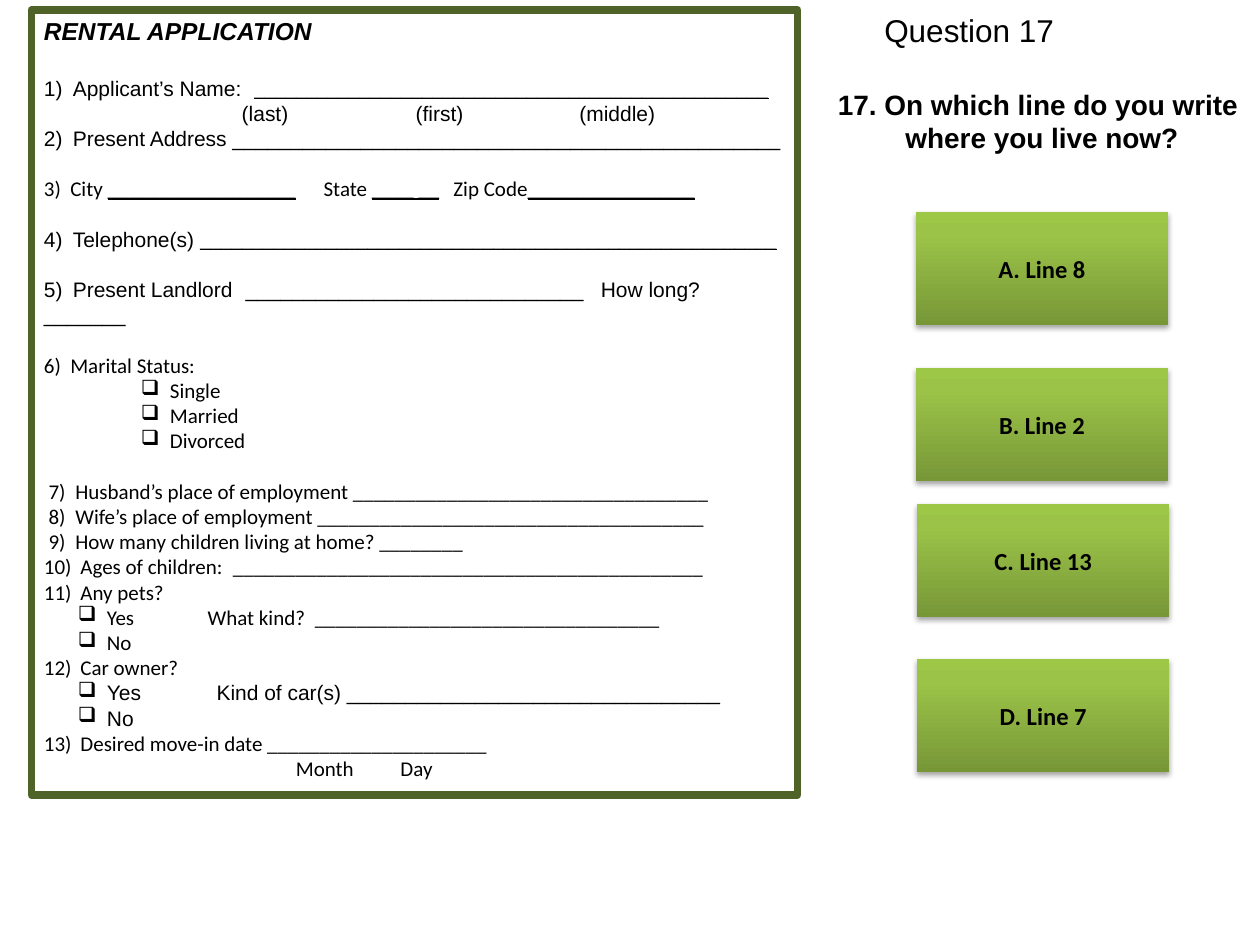
from dataclasses import dataclass

from lxml.etree import SubElement
from pptx import Presentation
from pptx.dml.color import RGBColor
from pptx.enum.shapes import MSO_SHAPE
from pptx.enum.text import MSO_ANCHOR, PP_ALIGN
from pptx.oxml.ns import qn
from pptx.util import Inches, Pt


@dataclass
class FormLine:
    """One form line; text between bars is an underlined blank."""
    text: str
    font: str = "Calibri"
    tabs: tuple = ()
    blank_font: str = ""
    gap: float = 0
    indent: float = 0
    size: float = 12
    heading: bool = False


GAP = 14.4
FORM_LINES = [
    FormLine("RENTAL APPLICATION", "Arial", size=14, heading=True),
    FormLine("1)\tApplicant’s Name:\t|" + "_" * 49 + "|", "Arial", (0.23, 1.67),
             "Times New Roman", 16.8),
    FormLine("\t(last)\t(first)\t(middle)", "Arial", (1.57, 2.95, 4.25)),
    FormLine("2)\tPresent Address " + "_" * 47, "Arial", (0.23,)),
    FormLine("3)\tCity |" + "_" * 18 + "|\tState |____ __|\tZip Code|" + "_" * 16 + "|",
             tabs=(0.21, 2.22, 3.25), gap=GAP),
    FormLine("4)\tTelephone(s) |" + "_" * 55 + "|", "Arial", (0.23,),
             "Times New Roman", GAP),
    FormLine("5)\tPresent Landlord\t" + "_" * 29 + "\tHow long? _______", "Arial",
             (0.23, 1.6, 4.42), gap=GAP),
    FormLine("6)\tMarital Status:", tabs=(0.21,), gap=GAP),
    FormLine("Single", indent=1),
    FormLine("Married", indent=1),
    FormLine("Divorced", indent=1),
    FormLine(" 7)\tHusband’s place of employment " + "_" * 34, tabs=(0.25,), gap=GAP),
    FormLine(" 8)\tWife’s place of employment " + "_" * 37, tabs=(0.25,)),
    FormLine(" 9)\tHow many children living at home? ________", tabs=(0.25,)),
    FormLine("10)\tAges of children:\t" + "_" * 45, tabs=(0.29, 1.5)),
    FormLine("11)\tAny pets?", tabs=(0.29,)),
    FormLine("Yes\tWhat kind?\t" + "_" * 33, tabs=(1.3, 2.15), indent=0.5),
    FormLine("No", indent=0.5),
    FormLine("12)\tCar owner?", tabs=(0.29,)),
    FormLine("Yes\tKind of car(s) " + "_" * 32, "Arial", (1.37,), indent=0.5),
    FormLine("No", "Arial", indent=0.5),
    FormLine("13)\tDesired move-in date " + "_" * 21, tabs=(0.29,)),
    FormLine("\tMonth\tDay", tabs=(2, 2.83)),
]
ANSWERS = [
    ("A. Line 8", 7.27, 1.68),
    ("B. Line 2", 7.27, 2.92),
    ("C. Line 13", 7.28, 4),
    ("D. Line 7", 7.28, 5.23),
]
BUTTON_STOPS = [(0, "779737"), (80, "9BC348"), (100, "9DC746")]


def color(value):
    """Turn a hex string into a colour."""
    return RGBColor.from_string(value)


def style(font, name, size, bold=False):
    """Set black text in the given face."""
    font.name, font.size, font.bold = name, Pt(size), bold
    font.color.rgb = color("000000")


def add_layout_marks(paragraph, line):
    """Add the checkbox bullet, indent and tab stops of a form line."""
    properties = paragraph._p.get_or_add_pPr()
    if line.indent:
        properties.set("marL", str(Inches(line.indent)))
        properties.set("indent", str(Inches(-0.23)))
        SubElement(properties, qn("a:buChar"), char="❑")
    if line.tabs:
        stops = SubElement(properties, qn("a:tabLst"))
        for position in line.tabs:
            SubElement(stops, qn("a:tab"), pos=str(Inches(position)), algn="l")


def write_form_line(paragraph, line):
    """Write one form line with its underlined blanks."""
    add_layout_marks(paragraph, line)
    paragraph.alignment = PP_ALIGN.LEFT
    paragraph.line_spacing = Pt(line.size * 1.2)
    if line.gap:
        paragraph.space_before = Pt(line.gap)
    style(paragraph.font, line.font, line.size, line.heading)
    paragraph.font.italic = line.heading
    for index, part in enumerate(line.text.split("|")):
        if part:
            run = paragraph.add_run()
            run.text = part
            if index % 2:
                run.font.underline = True
                if line.blank_font:
                    run.font.name = line.blank_font


def add_form(slide, left, top, width, height):
    """Draw the framed rental application."""
    form = slide.shapes.add_shape(MSO_SHAPE.RECTANGLE, left, top, width, height)
    form.shadow.inherit = False
    form.fill.solid()
    form.fill.fore_color.rgb = color("FFFFFF")
    form.line.color.rgb = color("4F6228")
    form.line.width = Pt(4.5)
    frame = form.text_frame
    frame.word_wrap = True
    frame.vertical_anchor = MSO_ANCHOR.TOP
    for index, line in enumerate(FORM_LINES):
        paragraph = frame.add_paragraph() if index else frame.paragraphs[0]
        write_form_line(paragraph, line)


def add_prompt(slide, box, lines, size, bold, alignment):
    """Place a heading or question text."""
    frame = slide.shapes.add_textbox(*box).text_frame
    frame.word_wrap = False
    frame.vertical_anchor = MSO_ANCHOR.MIDDLE
    for index, text in enumerate(lines):
        paragraph = frame.add_paragraph() if index else frame.paragraphs[0]
        paragraph.text = text
        paragraph.alignment = alignment
        style(paragraph.font, "Arial", size, bold)


def add_answer(slide, label, left, top, width, height):
    """Draw one answer button with its gradient and shadow."""
    button = slide.shapes.add_shape(
        MSO_SHAPE.ACTION_BUTTON_CUSTOM, left, top, width, height)
    button.shadow.inherit = False
    button.line.fill.background()
    button.fill.gradient()
    button.fill.gradient_angle = 90
    stops = button._element.spPr.find(".//" + qn("a:gsLst"))
    stops.clear()
    for position, value in BUTTON_STOPS:
        stop = SubElement(stops, qn("a:gs"), pos=str(position * 1000))
        SubElement(stop, qn("a:srgbClr"), val=value)
    effects = button._element.spPr.find(qn("a:effectLst"))
    shadow = SubElement(effects, qn("a:outerShdw"), blurRad=str(Pt(3.1)),
                        dist=str(Pt(1.8)), dir="5400000", rotWithShape="0")
    tint = SubElement(shadow, qn("a:srgbClr"), val="000000")
    SubElement(tint, qn("a:alpha"), val="35000")
    frame = button.text_frame
    frame.word_wrap = False
    frame.vertical_anchor = MSO_ANCHOR.MIDDLE
    paragraph = frame.paragraphs[0]
    paragraph.text = label
    paragraph.alignment = PP_ALIGN.CENTER
    style(paragraph.font, "Calibri", 14, True)


def main():
    """Build the question slide."""
    presentation = Presentation()
    presentation.slide_width, presentation.slide_height = Inches(10), Inches(7.5)
    slide = presentation.slides.add_slide(presentation.slide_layouts[6])
    title_box = [Inches(n) for n in (6.92, 0.04, 1.83, 0.4)]
    question_box = [Inches(n) for n in (6.25, 0.75, 4.04, 0.42)]
    add_prompt(slide, title_box, ["Question 17"], 18, False, PP_ALIGN.LEFT)
    add_form(slide, Inches(0.25), Inches(0.08), Inches(6.08), Inches(6.23))
    add_prompt(slide, question_box,
               ["17. On which line do you write ", "where you live now?"],
               16, True, PP_ALIGN.CENTER)
    for label, left, top in ANSWERS:
        add_answer(slide, label, Inches(left), Inches(top), Inches(2), Inches(0.9))
    presentation.save("out.pptx")


if __name__ == "__main__":
    main()
